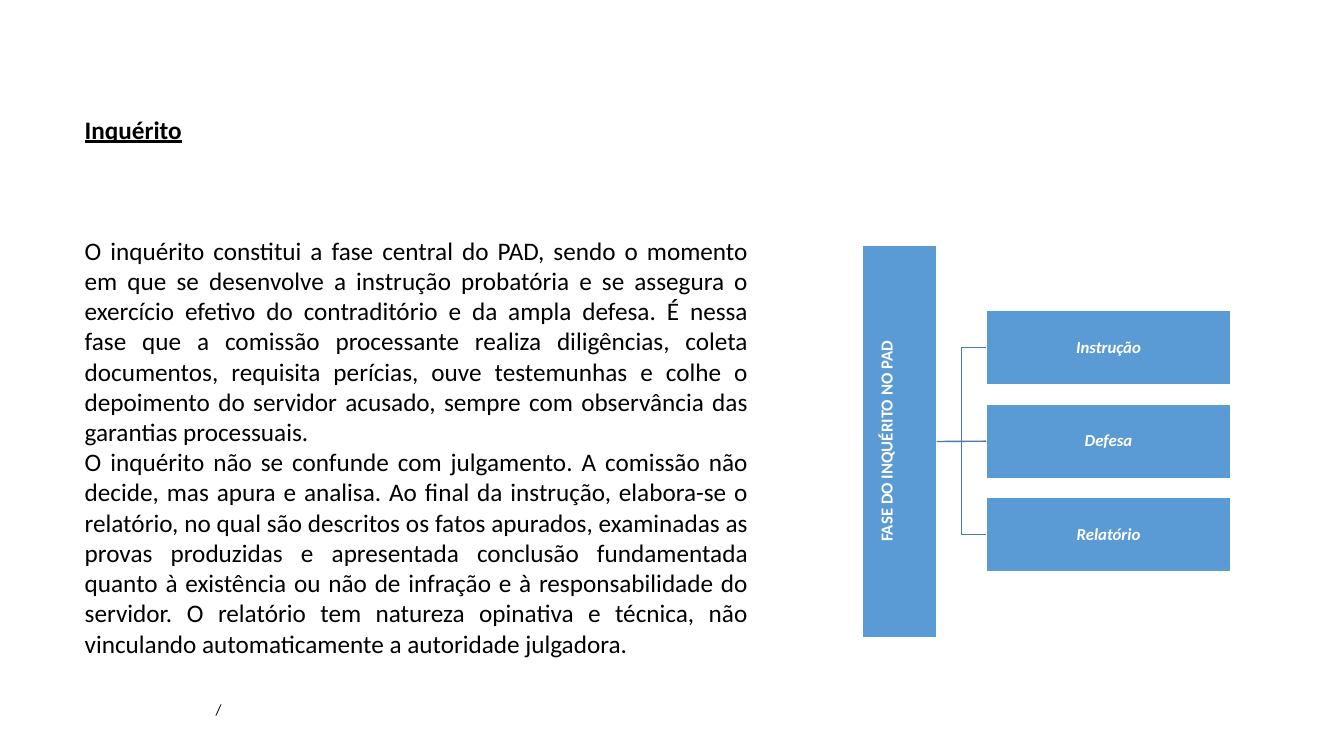
"""Build the slide on the inquiry phase of the disciplinary process."""
from dataclasses import dataclass

from lxml.etree import SubElement
from pptx import Presentation
from pptx.dml.color import RGBColor
from pptx.enum.shapes import MSO_CONNECTOR as Line, MSO_SHAPE as Preset
from pptx.enum.text import MSO_ANCHOR as Anchor, MSO_AUTO_SIZE as AutoSize, PP_ALIGN as Align
from pptx.oxml.ns import qn
from pptx.util import Inches, Pt

BLACK = RGBColor(0x00, 0x00, 0x00)
WHITE = RGBColor(0xFF, 0xFF, 0xFF)
BLUE = RGBColor(0x5B, 0x9B, 0xD5)
DARK_BLUE = RGBColor(0x49, 0x7C, 0xAB)
FONT = "Calibri"

HEADING = "Inquérito"
BODY = [
    "O inquérito constitui a fase central do PAD, sendo o momento em que se desenvolve a "
    "instrução probatória e se assegura o exercício efetivo do contraditório e da ampla defesa. "
    "É nessa fase que a comissão processante realiza diligências, coleta documentos, requisita "
    "perícias, ouve testemunhas e colhe o depoimento do servidor acusado, sempre com observância "
    "das garantias processuais.",
    "O inquérito não se confunde com julgamento. A comissão não decide, mas apura e analisa. "
    "Ao final da instrução, elabora-se o relatório, no qual são descritos os fatos apurados, "
    "examinadas as provas produzidas e apresentada conclusão fundamentada quanto à existência "
    "ou não de infração e à responsabilidade do servidor. O relatório tem natureza opinativa e "
    "técnica, não vinculando automaticamente a autoridade julgadora.",
]
PHASES = ["Instrução", "Defesa", "Relatório"]
PHASE_TOP, PHASE_STEP = 3.08, 0.927


@dataclass
class Area:
    left: float
    top: float
    width: float
    height: float

    def lengths(self) -> list:
        return [Inches(v) for v in (self.left, self.top, self.width, self.height)]


@dataclass
class Block:
    text: str
    area: Area
    italic: bool = True
    vertical: bool = False


def style(para, size: float, color: RGBColor, align: Align, bold: bool = False) -> None:
    para.alignment = align
    font = para.font
    font.name, font.size, font.bold = FONT, Pt(size), bold
    font.color.rgb = color


def fill_placeholder(box, area: Area, texts: list[str], bold: bool = False) -> None:
    box.left, box.top, box.width, box.height = area.lengths()
    frame = box.text_frame
    frame.word_wrap = True
    frame.auto_size = AutoSize.NONE
    frame.vertical_anchor = Anchor.TOP
    frame.text = "\n".join(texts)
    for para in frame.paragraphs:
        properties = para._p.get_or_add_pPr()
        properties.set("marL", "0")
        properties.set("indent", "0")
        SubElement(properties, qn("a:buNone"))
        para.space_before = Pt(0)
        style(para, 18, BLACK, Align.JUSTIFY, bold)
        para.font.underline = bold


def add_block(page, block: Block):
    box = page.shapes.add_shape(Preset.RECTANGLE, *block.area.lengths())
    box.shadow.inherit = False
    box.fill.solid()
    box.fill.fore_color.rgb = BLUE
    box.line.color.rgb = WHITE
    box.line.width = Pt(1)
    frame = box.text_frame
    frame.word_wrap = True
    frame.vertical_anchor = Anchor.MIDDLE
    frame.margin_left = frame.margin_right = Inches(0.01)
    frame.margin_top = frame.margin_bottom = Inches(0.01)
    if block.vertical:
        frame._txBody.bodyPr.set("vert", "vert270")
        frame.margin_right = Inches(0.25)
    frame.text = block.text
    para = frame.paragraphs[0]
    para.line_spacing = 0.9
    style(para, 12, WHITE, Align.CENTER, bold=True)
    para.font.italic = block.italic
    return box


def join(page, source, target, kind: Line) -> None:
    link = page.shapes.add_connector(kind, 0, 0, 0, 0)
    link.begin_connect(source, 3)
    link.end_connect(target, 1)
    link.line.color.rgb = DARK_BLUE
    link.line.width = Pt(1)
    SubElement(link._element.spPr, qn("a:effectLst"))


def main() -> None:
    deck = Presentation()
    deck.slide_width, deck.slide_height = Inches(13.33), Inches(7.5)
    page = deck.slides.add_slide(deck.slide_layouts[1])

    fill_placeholder(page.shapes.title, Area(0.74, 1.08, 6.78, 0.4), [HEADING], bold=True)
    fill_placeholder(page.placeholders[1], Area(0.74, 2.28, 6.78, 4.4), BODY)

    footer = page.shapes.add_textbox(*Area(2.04, 6.9, 9.25, 0.29).lengths())
    footer.text_frame.word_wrap = True
    footer.text_frame.text = "/"
    style(footer.text_frame.paragraphs[0], 11, BLACK, Align.LEFT)

    bar = add_block(page, Block("FASE DO INQUÉRITO NO PAD", Area(8.55, 2.43, 0.74, 3.9),
                                italic=False, vertical=True))
    for index, phase in enumerate(PHASES):
        area = Area(9.78, PHASE_TOP + index * PHASE_STEP, 2.43, 0.74)
        box = add_block(page, Block(phase, area))
        join(page, bar, box, Line.STRAIGHT if index == 1 else Line.ELBOW)

    deck.save("out.pptx")


if __name__ == "__main__":
    main()
